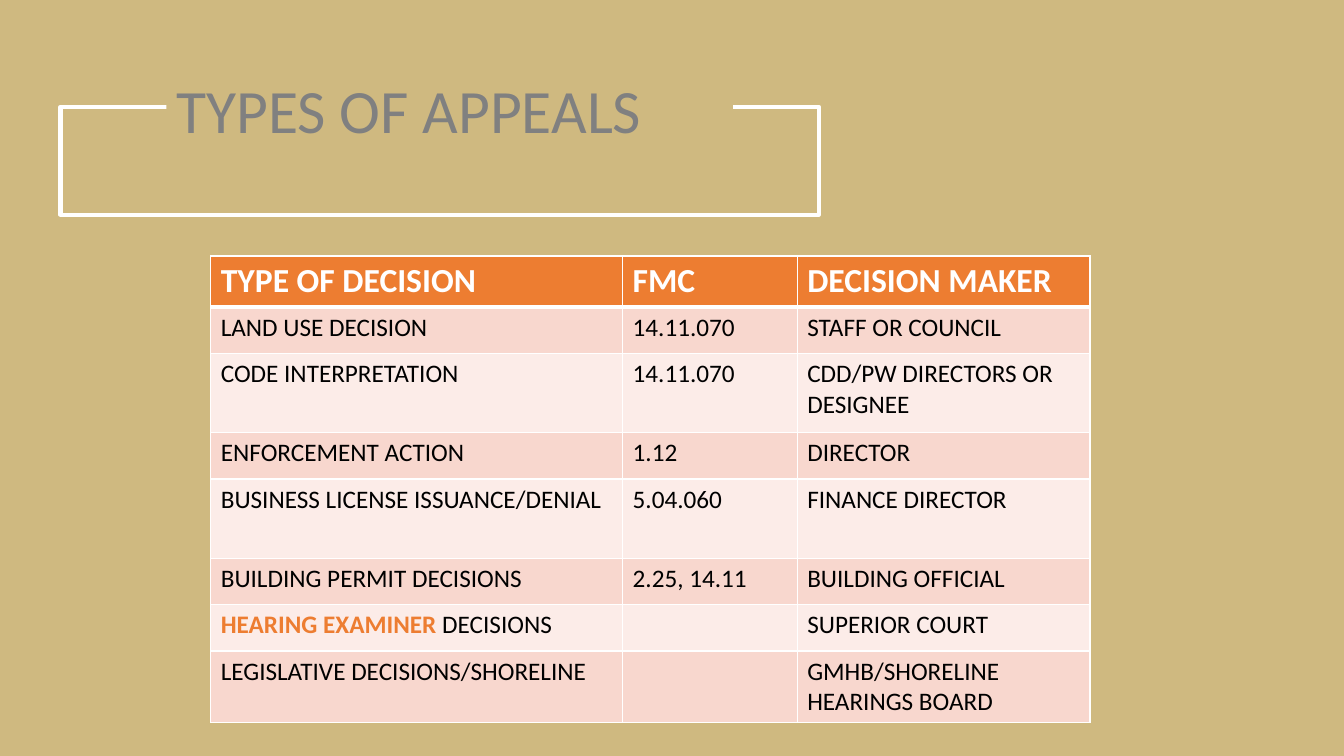
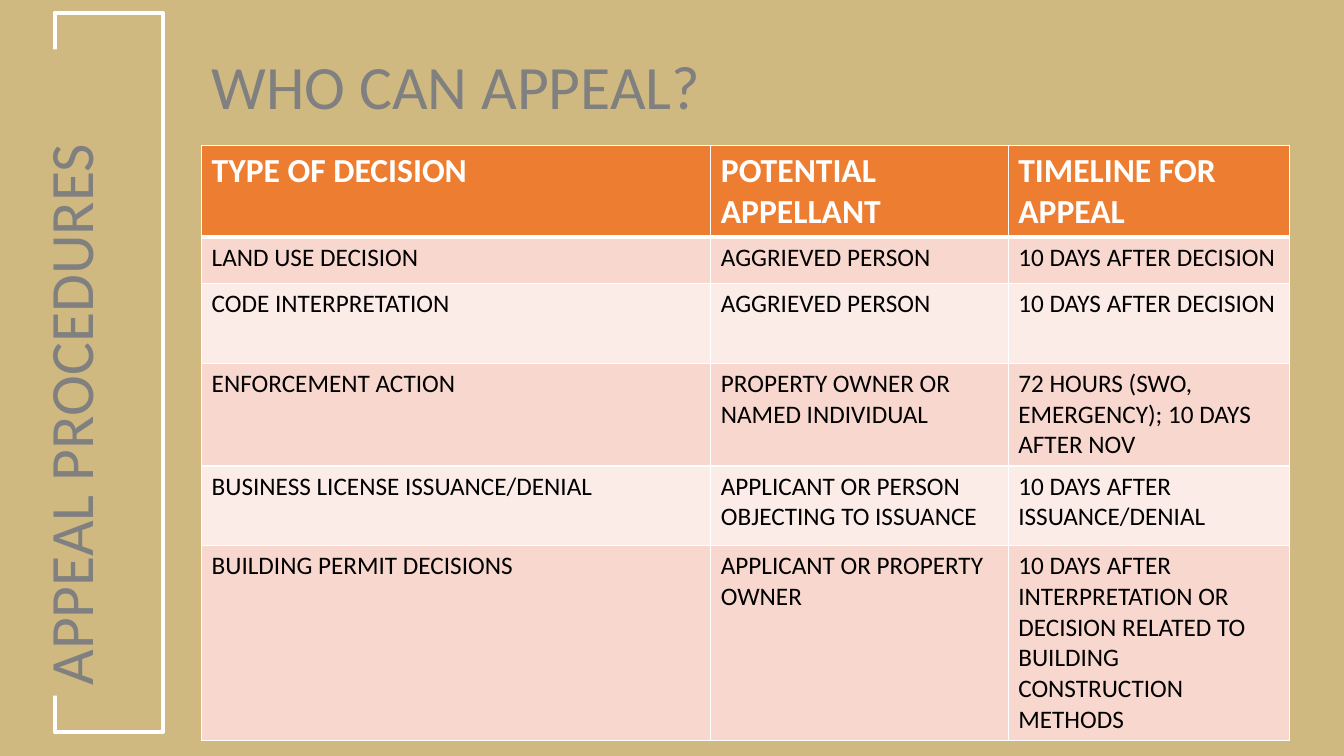
from dataclasses import dataclass

from lxml import etree
from pptx import Presentation
from pptx.dml.color import RGBColor
from pptx.enum.shapes import MSO_SHAPE
from pptx.enum.text import MSO_ANCHOR, PP_ALIGN
from pptx.oxml.ns import qn
from pptx.util import Inches, Pt


@dataclass(frozen=True)
class Theme:
    font: str = "Calibri"
    background: str = "CFB980"
    title: str = "808080"
    accent: str = "ED7D31"
    light: str = "FFFFFF"
    ink: str = "000000"
    bands: tuple = ("F8D7CE", "FCECE8")
    title_size: int = 44
    header_size: int = 24
    body_size: int = 18
    thin: int = 1
    thick: int = 3


@dataclass(frozen=True)
class Box:
    """An area of the slide, in cells of the grid."""
    left: float
    top: float
    width: float
    height: float

    def turned(self):
        """Same centre, with the two sides swapped."""
        shift = (self.width - self.height) / 2
        return Box(self.left + shift, self.top - shift, self.height, self.width)

    def emu(self):
        return [cells(n) for n in (self.left, self.top, self.width, self.height)]


THEME = Theme()
COLUMNS, ROWS = 133.3, 75
CELL = 0.1

APPEAL_TYPES = [
    ("TYPE OF DECISION", "FMC", "DECISION MAKER"),
    ("LAND USE DECISION", "14.11.070", "STAFF OR COUNCIL"),
    ("CODE INTERPRETATION", "14.11.070", "CDD/PW DIRECTORS OR DESIGNEE"),
    ("ENFORCEMENT ACTION", "1.12", "DIRECTOR"),
    ("BUSINESS LICENSE ISSUANCE/DENIAL", "5.04.060", "FINANCE DIRECTOR"),
    ("BUILDING PERMIT DECISIONS", "2.25, 14.11", "BUILDING OFFICIAL"),
    (("HEARING EXAMINER ", "DECISIONS"), "", "SUPERIOR COURT"),
    ("LEGISLATIVE DECISIONS/SHORELINE", "", "GMHB/SHORELINE HEARINGS BOARD"),
]
APPELLANTS = [
    ("TYPE OF DECISION", "POTENTIAL APPELLANT", "TIMELINE FOR APPEAL"),
    ("LAND USE DECISION", "AGGRIEVED PERSON", "10 DAYS AFTER DECISION"),
    ("CODE INTERPRETATION", "AGGRIEVED PERSON", "10 DAYS AFTER DECISION"),
    ("ENFORCEMENT ACTION", "PROPERTY OWNER OR NAMED INDIVIDUAL",
     "72 HOURS (SWO, EMERGENCY); 10 DAYS AFTER NOV"),
    ("BUSINESS LICENSE ISSUANCE/DENIAL",
     "APPLICANT OR PERSON OBJECTING TO ISSUANCE", "10 DAYS AFTER ISSUANCE/DENIAL"),
    ("BUILDING PERMIT DECISIONS", "APPLICANT OR PROPERTY OWNER",
     "10 DAYS AFTER INTERPRETATION OR DECISION RELATED TO BUILDING "
     "CONSTRUCTION METHODS"),
]


def cells(count):
    return Inches(count * CELL)


def rgb(value):
    return RGBColor.from_string(value)


def style_run(run, size, color, bold=False):
    run.font.name = THEME.font
    run.font.size = Pt(size)
    run.font.bold = bold
    run.font.color.rgb = rgb(color)


def add_rectangle(slide, box, upright):
    """Rectangle covering the box; an upright one is turned to read upwards."""
    area = box.turned() if upright else box
    rectangle = slide.shapes.add_shape(MSO_SHAPE.RECTANGLE, *area.emu())
    rectangle.rotation = 270 if upright else 0
    rectangle.shadow.inherit = False
    return rectangle


def add_frame(slide, box, upright=False):
    frame = add_rectangle(slide, box, upright)
    frame.fill.background()
    frame.line.color.rgb = rgb(THEME.light)
    frame.line.width = Pt(THEME.thick)


def add_title(slide, box, wording, upright=False):
    """Title on a background patch, which opens a gap in any frame below it."""
    title = add_rectangle(slide, box, upright)
    title.fill.solid()
    title.fill.fore_color.rgb = rgb(THEME.background)
    title.line.fill.background()
    title.text_frame.text = wording
    title.text_frame.word_wrap = True
    title.text_frame.vertical_anchor = MSO_ANCHOR.MIDDLE
    paragraph = title.text_frame.paragraphs[0]
    paragraph.alignment = PP_ALIGN.LEFT
    paragraph.line_spacing = 0.9
    style_run(paragraph.runs[0], THEME.title_size, THEME.title)


def set_borders(cell, top, bottom):
    properties = cell._tc.get_or_add_tcPr()
    widths = {"lnL": THEME.thin, "lnR": THEME.thin, "lnT": top, "lnB": bottom}
    for side, width in widths.items():
        line = etree.SubElement(properties, qn(f"a:{side}"), w=str(Pt(width)))
        fill = etree.SubElement(line, qn("a:solidFill"))
        etree.SubElement(fill, qn("a:srgbClr"), val=THEME.light)


def fill_cell(cell, content, row):
    """Write one cell; of two-part content the first part is emphasised."""
    header = row == 0
    set_borders(cell, THEME.thick if row == 1 else THEME.thin,
                THEME.thick if header else THEME.thin)
    cell.fill.solid()
    cell.fill.fore_color.rgb = rgb(
        THEME.accent if header else THEME.bands[(row - 1) % 2])
    paragraph = cell.text_frame.paragraphs[0]
    paragraph.font.size = Pt(THEME.header_size if header else THEME.body_size)
    if isinstance(content, tuple):
        emphasis, rest = content
        paragraph.text = emphasis
        style_run(paragraph.runs[0], THEME.body_size, THEME.accent, True)
        ending = paragraph.add_run()
        ending.text = rest
        style_run(ending, THEME.body_size, THEME.ink)
    elif content:
        paragraph.text = content
        if header:
            style_run(paragraph.runs[0], THEME.header_size, THEME.light, True)
        else:
            style_run(paragraph.runs[0], THEME.body_size, THEME.ink)


def add_decision_table(slide, box, records, widths, heights):
    """Table filling the box; widths and heights are relative weights."""
    table = slide.shapes.add_table(len(records), len(widths), *box.emu()).table
    for column, weight in zip(table.columns, widths):
        column.width = cells(box.width * weight / sum(widths))
    for row, weight in zip(table.rows, heights):
        row.height = cells(box.height * weight / sum(heights))
    for row, record in enumerate(records):
        for column, content in enumerate(record):
            fill_cell(table.cell(row, column), content, row)


def add_blank_slide(deck):
    slide = deck.slides.add_slide(deck.slide_layouts[6])
    slide.background.fill.solid()
    slide.background.fill.fore_color.rgb = rgb(THEME.background)
    return slide


def build_appeal_types(deck):
    slide = add_blank_slide(deck)
    add_frame(slide, Box(6, 10.6, 75.2, 10.7))
    add_title(slide, Box(16.5, 4, 56.2, 14.5), "TYPES OF APPEALS")
    add_decision_table(slide, Box(20.9, 25.4, 87.2, 46.2), APPEAL_TYPES,
                       (4.08, 1.73, 2.9),
                       (0.5, 0.46, 0.79, 0.46, 0.79, 0.46, 0.46, 0.71))


def build_appellants(deck):
    slide = add_blank_slide(deck)
    add_title(slide, Box(20, 1.6, 64.1, 14.5), "WHO CAN APPEAL?")
    add_decision_table(slide, Box(20, 14.4, 107.9, 58.9), APPELLANTS,
                       (5.05, 2.95, 2.79),
                       (0.91, 0.46, 0.79, 1.02, 0.79, 1.92))
    add_frame(slide, Box(5.45, 1.25, 10.7, 71.4), upright=True)
    add_title(slide, Box(0, 4.9, 14.5, 64.1), "APPEAL PROCEDURES", upright=True)


def main():
    deck = Presentation()
    deck.slide_width, deck.slide_height = cells(COLUMNS), cells(ROWS)
    build_appeal_types(deck)
    build_appellants(deck)
    deck.save("out.pptx")


if __name__ == "__main__":
    main()
